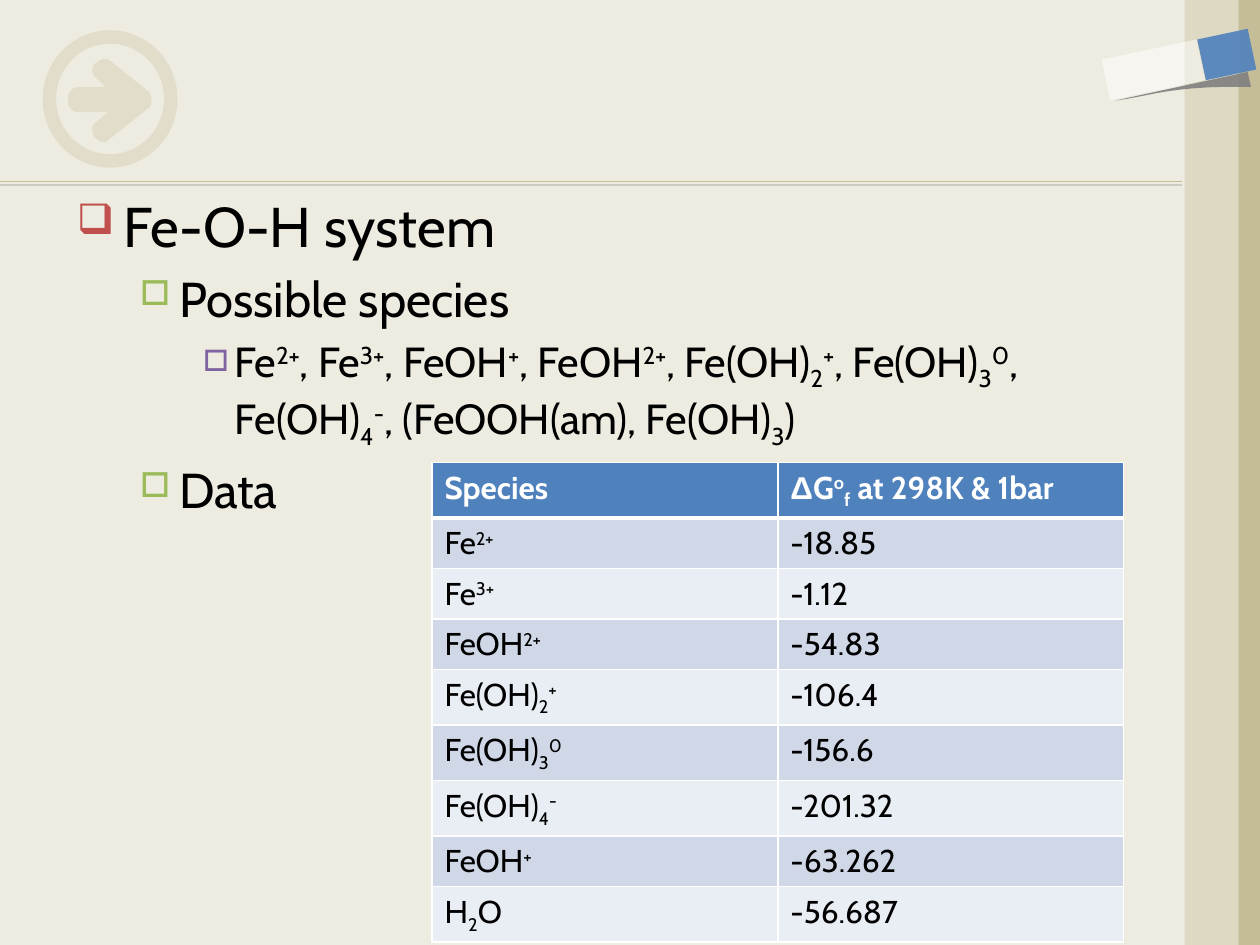
from lxml.etree import SubElement
from pptx import Presentation
from pptx.dml.color import RGBColor
from pptx.enum.shapes import MSO_CONNECTOR, MSO_SHAPE as Shape
from pptx.oxml.ns import qn
from pptx.util import Cm, Pt

FONT = "Cabin"
COLORS = {
    "paper": "EEECE1", "tan": "C4BD97", "sand": "DDD9C3", "grey": "808080",
    "blue": "4F81BD", "white": "FFFFFF", "black": "000000",
    "band_dark": "D0D8E8", "band_light": "E9EDF4",
    "red": "C0504D", "green": "9BBB59", "purple": "8064A2",
}

# "|" separates runs; a leading "^" raises a run and a leading "_" lowers it.
OUTLINE = [
    (0, "Fe-O-H system"),
    (1, "Possible species"),
    (2, "Fe|^2+|, Fe|^3+|, FeOH|^+|, FeOH|^2+|, Fe(OH)|_2|^+|, Fe(OH)|_3|^0"
        "|, Fe(OH)|_4|^-|, (FeOOH(am), Fe(OH)|_3|)"),
    (1, "Data"),
]
# Text size, left edge in cm, hanging indent in cm, bullet, its colour, its size in %
LEVELS = [
    (32, 0.95, 0.95, "❑", "red", 75),
    (28, 2.06, 0.79, "□", "green", 70),
    (24, 3.18, 0.64, "□", "purple", 70),
]
ENERGIES = [
    ("Species", "Δ|G|^o|_f| at 298K & 1bar"),
    ("Fe|^2+", "-18.85"),
    ("Fe|^3+", "-1.12"),
    ("FeOH|^2+", "-54.83"),
    ("Fe(OH)|_2|^+", "-106.4"),
    ("Fe(OH)|_3|^0", "-156.6"),
    ("Fe(OH)|_4|^-", "-201.32"),
    ("FeOH|^+", "-63.262"),
    ("H|_2|O", "-56.687"),
]

# Outlines in cm: one point is a straight side, three points a Bezier curve.
ARROW = [
    [(3.0, 1.85)],
    [(2.84, 1.73), (2.34, 1.3), (2.16, 1.19)],
    [(2.06, 1.17), (2.01, 1.22), (1.93, 1.27)],
    [(1.85, 1.32), (1.83, 1.45), (1.91, 1.55)],
    [(2.13, 1.75)], [(1.55, 1.75)],
    [(1.4, 1.8), (1.37, 1.93), (1.37, 2.01)],
    [(1.35, 2.11), (1.42, 2.24), (1.55, 2.26)],
    [(2.18, 2.26)], [(1.88, 2.51)],
    [(1.85, 2.59), (1.85, 2.72), (1.91, 2.77)],
    [(1.96, 2.82), (2.03, 2.87), (2.13, 2.87)],
    [(2.57, 2.51), (3.02, 2.16), (3.02, 2.16)],
    [(3.07, 2.08), (3.05, 2.06), (3.05, 2.01)],
    [(3.05, 1.96), (3.05, 1.91), (3.0, 1.85)],
]
TAG_SHADOW = [
    [(25.15, 1.45)], [(25.22, 1.75)],
    [(23.57, 1.73), (23.24, 1.93), (22.48, 2.03)],
    [(23.37, 1.83), (24.26, 1.65), (25.15, 1.45)],
]


def rgb(name):
    return RGBColor.from_string(COLORS[name])


def paint(shape, color, opacity=100):
    shape.shadow.inherit = False
    shape.line.fill.background()
    shape.fill.solid()
    shape.fill.fore_color.rgb = rgb(color)
    if opacity < 100:
        tint = shape._element.spPr.xpath("./a:solidFill/a:srgbClr")[0]
        SubElement(tint, qn("a:alpha"), val=str(opacity * 1000))


def add_block(slide, kind, box, color, opacity=100, rotation=0):
    block = slide.shapes.add_shape(kind, *map(Cm, box))
    block.rotation = rotation
    paint(block, color, opacity)
    return block


def add_outline(slide, segments, color, opacity, steps=10):
    """Draw a closed outline, with each curve sampled in equal steps."""
    points = [segments[0][0]]
    for segment in segments[1:]:
        if len(segment) == 1:
            points += segment
            continue
        corners = [points[-1], *segment]
        for i in range(1, steps + 1):
            t = i / steps
            weights = ((1 - t) ** 3, 3 * t * (1 - t) ** 2, 3 * t * t * (1 - t), t ** 3)
            points.append(tuple(sum(w * c[axis] for w, c in zip(weights, corners))
                                for axis in (0, 1)))
    start, *rest = [(Cm(x), Cm(y)) for x, y in points]
    builder = slide.shapes.build_freeform(*start)
    builder.add_line_segments(rest, close=True)
    paint(builder.convert_to_shape(), color, opacity)


def write(paragraph, marked, size, color, bold=False):
    for part in marked.split("|"):
        run = paragraph.add_run()
        run.text = part.lstrip("^_")
        run.font.size, run.font.bold = Pt(size), bold
        run.font.name = "Arial" if part == "Δ" else FONT
        run.font.color.rgb = rgb(color)
        baseline = {"^": "30000", "_": "-25000"}.get(part[0])
        if baseline:
            run._r.get_or_add_rPr().set("baseline", baseline)


def add_rule(slide):
    rule = slide.shapes.add_connector(MSO_CONNECTOR.STRAIGHT, 0, Cm(3.66), Cm(23.83), Cm(3.66))
    rule.line.color.rgb = rgb("tan")
    rule.line.width = Pt(0.75)
    effects = SubElement(rule._element.spPr, qn("a:effectLst"))
    shadow = SubElement(effects, qn("a:outerShdw"), blurRad="0", dist=str(Pt(2)), dir="5400000")
    tint = SubElement(shadow, qn("a:srgbClr"), val=COLORS["black"])
    SubElement(tint, qn("a:alpha"), val="22000")


def add_text(slide):
    body = slide.shapes.add_textbox(Cm(1.3), Cm(3.73), Cm(22.53), Cm(12.57)).text_frame
    body.word_wrap = True
    for i, (level, marked) in enumerate(OUTLINE):
        paragraph = body.add_paragraph() if i else body.paragraphs[0]
        size, left, hanging, bullet, color, percent = LEVELS[level]
        paragraph.level = level
        paragraph.space_before = Pt(size * 0.2)
        props = paragraph._p.get_or_add_pPr()
        props.set("marL", str(Cm(left)))
        props.set("indent", str(-Cm(hanging)))
        tint = SubElement(props, qn("a:buClr"))
        SubElement(tint, qn("a:srgbClr"), val=COLORS[color])
        SubElement(props, qn("a:buSzPct"), val=str(percent * 1000))
        SubElement(props, qn("a:buChar"), char=bullet)
        write(paragraph, marked, size, "black")


def add_borders(cell, top, bottom):
    props = cell._tc.get_or_add_tcPr()
    for side, width in (("L", 1), ("R", 1), ("T", top), ("B", bottom)):
        edge = SubElement(props, qn(f"a:ln{side}"), w=str(Pt(width)))
        fill = SubElement(edge, qn("a:solidFill"))
        SubElement(fill, qn("a:srgbClr"), val=COLORS["white"])


def add_energies(slide):
    row_height, column_width = Cm(0.84), Cm(6.97)
    table = slide.shapes.add_table(len(ENERGIES), 2, Cm(8.71), Cm(9.32),
                                   2 * column_width, len(ENERGIES) * row_height).table
    for r, row in enumerate(ENERGIES):
        header = r == 0
        fill = "blue" if header else "band_dark" if r % 2 else "band_light"
        for c, marked in enumerate(row):
            cell = table.cell(r, c)
            add_borders(cell, top=3 if r == 1 else 1, bottom=3 if header else 1)
            cell.fill.solid()
            cell.fill.fore_color.rgb = rgb(fill)
            write(cell.text_frame.paragraphs[0], marked, 18,
                  "white" if header else "black", header)


def main():
    deck = Presentation()
    deck.slide_width, deck.slide_height = Cm(25.4), Cm(19.05)
    slide = deck.slides.add_slide(deck.slide_layouts[6])
    slide.background.fill.solid()
    slide.background.fill.fore_color.rgb = rgb("paper")

    add_rule(slide)
    add_outline(slide, ARROW, "tan", 30)
    ring = add_block(slide, Shape.DONUT, (0.86, 0.61, 2.72, 2.77), "tan", 30)
    ring.adjustments[0] = 0.1
    add_block(slide, Shape.RECTANGLE, (23.9, 0, 1.5, 19.05), "tan")
    add_block(slide, Shape.RECTANGLE, (23.88, 0, 1.09, 19.05), "sand")
    add_outline(slide, TAG_SHADOW, "grey", 90)
    add_block(slide, Shape.RECTANGLE, (24.31, 0.58, 0.84, 1.04), "blue", 90, 78)
    add_block(slide, Shape.RECTANGLE, (22.83, 0.43, 0.84, 1.96), "white", 50, 78)
    add_text(slide)
    add_energies(slide)
    deck.save("out.pptx")


if __name__ == "__main__":
    main()
